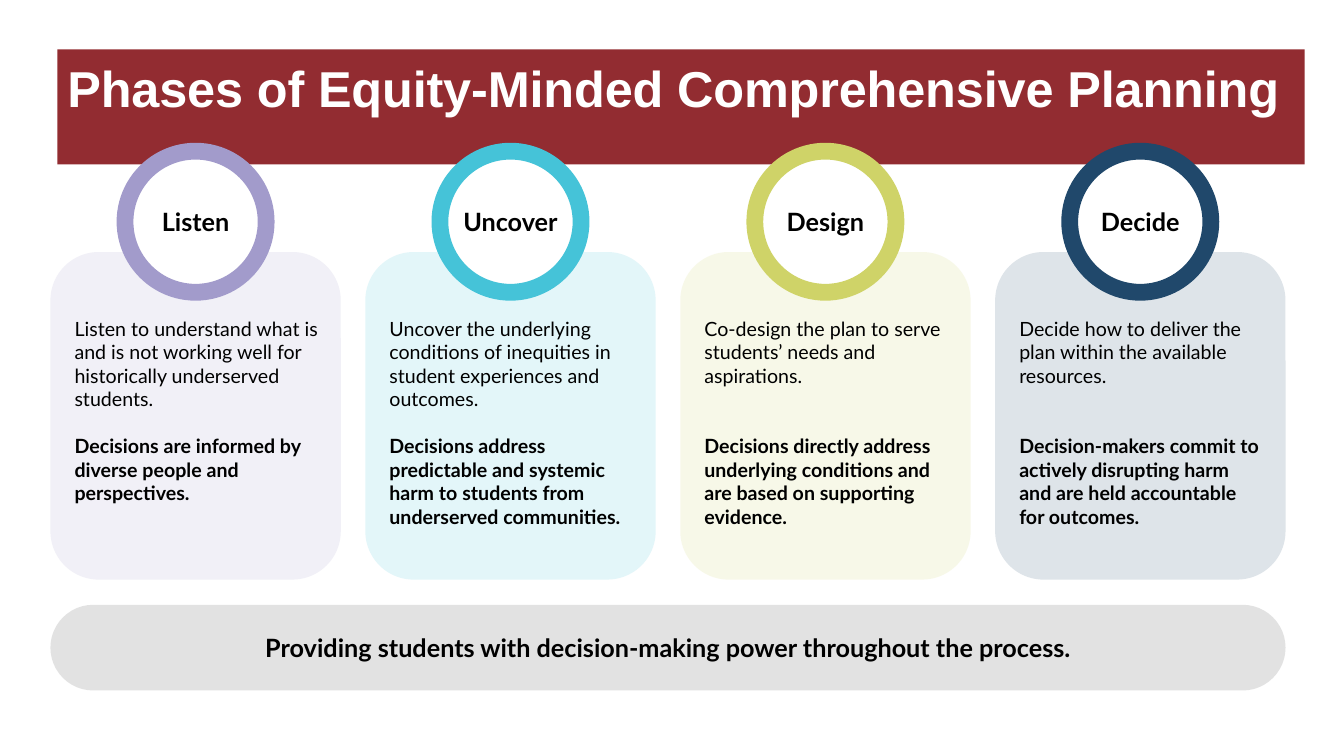
import pptx
import pptx.dml.color
import pptx.enum.shapes
import pptx.enum.text
import pptx.oxml
import pptx.oxml.ns
import pptx.util

Inches, Pt = pptx.util.Inches, pptx.util.Pt
RGBColor = pptx.dml.color.RGBColor
Shape = pptx.enum.shapes.MSO_SHAPE
Align = pptx.enum.text.PP_ALIGN
Anchor = pptx.enum.text.MSO_ANCHOR

BLACK = RGBColor(0x00, 0x00, 0x00)
WHITE = RGBColor(0xFF, 0xFF, 0xFF)
CRIMSON = RGBColor(0x92, 0x2C, 0x31)
GREY = RGBColor(0xD9, 0xD9, 0xD9)
LILAC, PALE_LILAC = RGBColor(0xA2, 0x9B, 0xCB), RGBColor(0xF1, 0xF0, 0xF7)
TEAL, PALE_TEAL = RGBColor(0x45, 0xC3, 0xD8), RGBColor(0xE3, 0xF6, 0xF9)
LIME = RGBColor(0xCF, 0xD3, 0x68)
NAVY, PALE_NAVY = RGBColor(0x20, 0x48, 0x6B), RGBColor(0xDE, 0xE4, 0xE9)

SLIDE_WIDTH, SLIDE_HEIGHT = 13.33, 7.5
LEFT, CONTENT_WIDTH = 0.5, 12.25
CARD_TOP, CARD_WIDTH, CARD_HEIGHT = 2.5, 2.88, 3.25
RING_TOP, RING_SIZE = 1.5, 1.4
LINE_HEIGHT = 16.8  # points, one line of 14 pt text

# name, ring colour, card colour, card opacity, aim, blank lines after it, decisions
PHASES = [
    ("Listen", LILAC, PALE_LILAC, 100,
     "Listen to understand what is and is not working well for historically "
     "underserved students.", 1,
     "Decisions are informed by diverse people and perspectives."),
    ("Uncover", TEAL, PALE_TEAL, 100,
     "Uncover the underlying conditions of inequities in student experiences "
     "and outcomes.", 1,
     "Decisions address predictable and systemic harm to students from "
     "underserved communities."),
    ("Design", LIME, LIME, 15,
     "Co-design the plan to serve students’ needs and aspirations.", 2,
     "Decisions directly address underlying conditions and are based on "
     "supporting evidence."),
    ("Decide", NAVY, PALE_NAVY, 100,
     "Decide how to deliver the plan within the available resources.", 2,
     "Decision-makers commit to actively disrupting harm and are held "
     "accountable for outcomes."),
]


def write(paragraph, text, size=18, font="Lato", color=BLACK, bold=True,
          align=Align.CENTER, before=0, spacing=None):
    paragraph.alignment = align
    if before:
        paragraph.space_before = Pt(before)
    run = paragraph.add_run()
    run.text = text
    run.font.size = Pt(size)
    run.font.name = font
    run.font.bold = bold
    run.font.color.rgb = color
    if spacing is not None:
        run.font._element.set("spc", str(round(spacing * 100)))


class PhaseSlide:
    """Holds the current slide and the look its elements share."""

    def __init__(self, slide):
        self.slide = slide

    def panel(self, kind, left, top, width, height, fill, opacity=100,
              anchor=Anchor.MIDDLE, insets=(0.1, 0.05, 0.1, 0.05)):
        """Adds a plain filled shape; insets run left, top, right, bottom."""
        shape = self.slide.shapes.add_shape(
            kind, Inches(left), Inches(top), Inches(width), Inches(height))
        shape.shadow.inherit = False
        shape.fill.solid()
        shape.fill.fore_color.rgb = fill
        shape.line.fill.background()
        if opacity < 100:
            color = shape._element.spPr.find(".//" + pptx.oxml.ns.qn("a:srgbClr"))
            color.append(pptx.oxml.parse_xml(
                f'<a:alpha {pptx.oxml.ns.nsdecls("a")} val="{opacity * 1000}"/>'))
        frame = shape.text_frame
        frame.word_wrap = True
        frame.vertical_anchor = anchor
        (frame.margin_left, frame.margin_top,
         frame.margin_right, frame.margin_bottom) = map(Inches, insets)
        return shape

    def banner(self, title):
        banner = self.panel(Shape.RECTANGLE, 0.57, 0.49, 12.37, 1.14, CRIMSON,
                            anchor=Anchor.TOP, insets=(0.1, 0.08, 0, 0))
        write(banner.text_frame.paragraphs[0], title, size=36, font="Arial",
              color=WHITE, align=Align.LEFT, spacing=-0.1)

    def card(self, left, fill, opacity, aim, blank_lines, decisions):
        card = self.panel(Shape.ROUNDED_RECTANGLE, left, CARD_TOP, CARD_WIDTH,
                          CARD_HEIGHT, fill, opacity, Anchor.TOP,
                          (0.1, 0.5, 0.05, 0.05))
        frame = card.text_frame
        write(frame.paragraphs[0], aim, size=14, bold=False, align=Align.LEFT)
        write(frame.add_paragraph(), decisions, size=14, align=Align.LEFT,
              before=blank_lines * LINE_HEIGHT)

    def ring(self, left, name, color):
        ring = self.panel(Shape.OVAL, left, RING_TOP, RING_SIZE, RING_SIZE,
                          WHITE, insets=(0, 0.05, 0, 0.05))
        ring.line.color.rgb = color
        ring.line.width = Pt(12)
        write(ring.text_frame.paragraphs[0], name)

    def footer(self, text):
        footer = self.panel(Shape.ROUNDED_RECTANGLE, LEFT, 6, CONTENT_WIDTH,
                            0.85, GREY, opacity=75)
        footer.adjustments[0] = 0.5
        write(footer.text_frame.paragraphs[0], text)


def main():
    deck = pptx.Presentation()
    deck.slide_width = Inches(SLIDE_WIDTH)
    deck.slide_height = Inches(SLIDE_HEIGHT)
    page = PhaseSlide(deck.slides.add_slide(deck.slide_layouts[6]))

    page.banner("Phases of Equity-Minded Comprehensive Planning")
    step = (CONTENT_WIDTH - CARD_WIDTH) / (len(PHASES) - 1)
    for index, (name, ring_color, *card) in enumerate(PHASES):
        left = LEFT + index * step
        page.card(left, *card)
        page.ring(left + (CARD_WIDTH - RING_SIZE) / 2, name, ring_color)
    page.footer("Providing students with decision-making power throughout the process.")

    deck.save("out.pptx")


if __name__ == "__main__":
    main()
